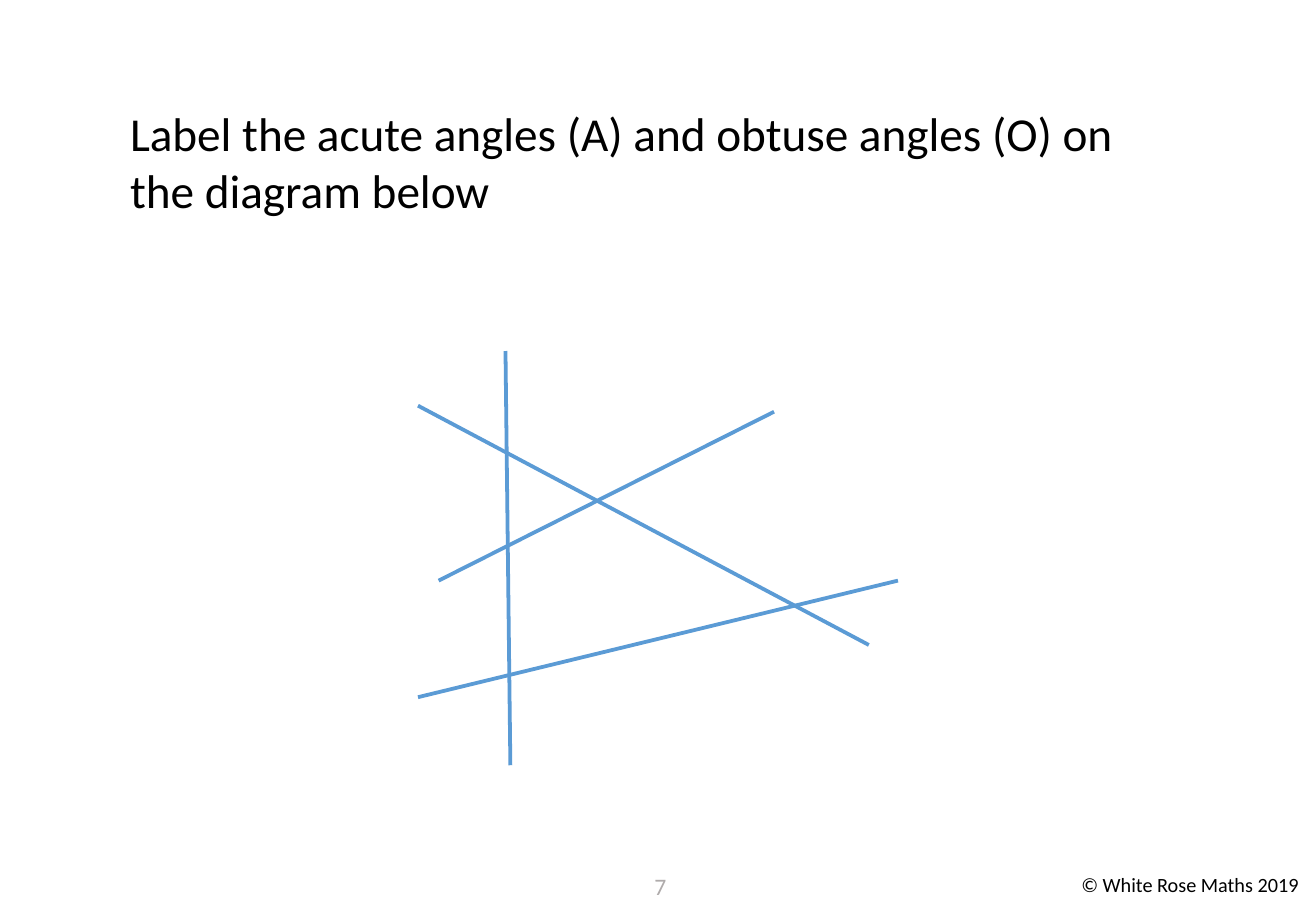
from dataclasses import dataclass

from lxml import etree
from pptx import Presentation
from pptx.dml.color import RGBColor
from pptx.enum import shapes, text
from pptx.oxml import ns
from pptx.slide import Slide
from pptx.text.text import TextFrame
from pptx.util import Inches, Pt

BLACK = RGBColor(0x00, 0x00, 0x00)
GREY = RGBColor(0xAF, 0xAB, 0xAB)
BLUE = RGBColor(0x5B, 0x9B, 0xD5)
FONT = "Calibri"


@dataclass(frozen=True)
class Label:
    wording: str
    left: float
    top: float
    width: float
    height: float
    size: int
    color: RGBColor = BLACK
    align: text.PP_ALIGN = text.PP_ALIGN.LEFT


@dataclass(frozen=True)
class Segment:
    x1: float
    y1: float
    x2: float
    y2: float


QUESTION = Label(
    "Label the acute angles (A) and obtuse angles (O) on the diagram below",
    0.97, 0.81, 8.81, 1.04, 28,
)
FOOTERS = (
    Label("© White Rose Maths 2019", 8.8, 7.13, 2.71, 0.3, 12),
    Label("7", 5.18, 7.13, 0.51, 0.4, 14, GREY, text.PP_ALIGN.CENTER),
)
DIAGRAM = (
    Segment(4.16, 2.89, 4.2, 6.3),
    Segment(3.44, 3.34, 7.15, 5.31),
    Segment(3.61, 4.78, 6.37, 3.39),
    Segment(3.44, 5.74, 7.39, 4.78),
)


def write_label(frame: TextFrame, label: Label) -> None:
    frame.word_wrap = True
    frame.auto_size = text.MSO_AUTO_SIZE.NONE
    frame.vertical_anchor = text.MSO_ANCHOR.TOP
    paragraph = frame.paragraphs[0]
    paragraph.alignment = label.align
    paragraph.line_spacing = 1.0
    paragraph.space_before = Pt(0)
    run = paragraph.add_run()
    run.text = label.wording
    run.font.name = FONT
    run.font.size = Pt(label.size)
    run.font.color.rgb = label.color


def add_question(slide: Slide, label: Label) -> None:
    question = slide.shapes.title
    question.left, question.top = Inches(label.left), Inches(label.top)
    question.width, question.height = Inches(label.width), Inches(label.height)
    write_label(question.text_frame, label)


def add_footer(slide: Slide, label: Label) -> None:
    footer = slide.shapes.add_textbox(
        Inches(label.left), Inches(label.top),
        Inches(label.width), Inches(label.height),
    )
    write_label(footer.text_frame, label)


def add_segment(slide: Slide, segment: Segment) -> None:
    line = slide.shapes.add_connector(
        shapes.MSO_CONNECTOR.STRAIGHT,
        Inches(segment.x1), Inches(segment.y1),
        Inches(segment.x2), Inches(segment.y2),
    )
    line.line.color.rgb = BLUE
    line.line.width = Pt(2.25)
    etree.SubElement(line._element.spPr, ns.qn("a:effectLst"))


def main() -> None:
    deck = Presentation()
    deck.slide_width, deck.slide_height = Inches(10.83), Inches(7.5)
    title_only = deck.slide_layouts[5]
    slide = deck.slides.add_slide(title_only)
    add_question(slide, QUESTION)
    for footer in FOOTERS:
        add_footer(slide, footer)
    for segment in DIAGRAM:
        add_segment(slide, segment)
    deck.save("out.pptx")


if __name__ == "__main__":
    main()
